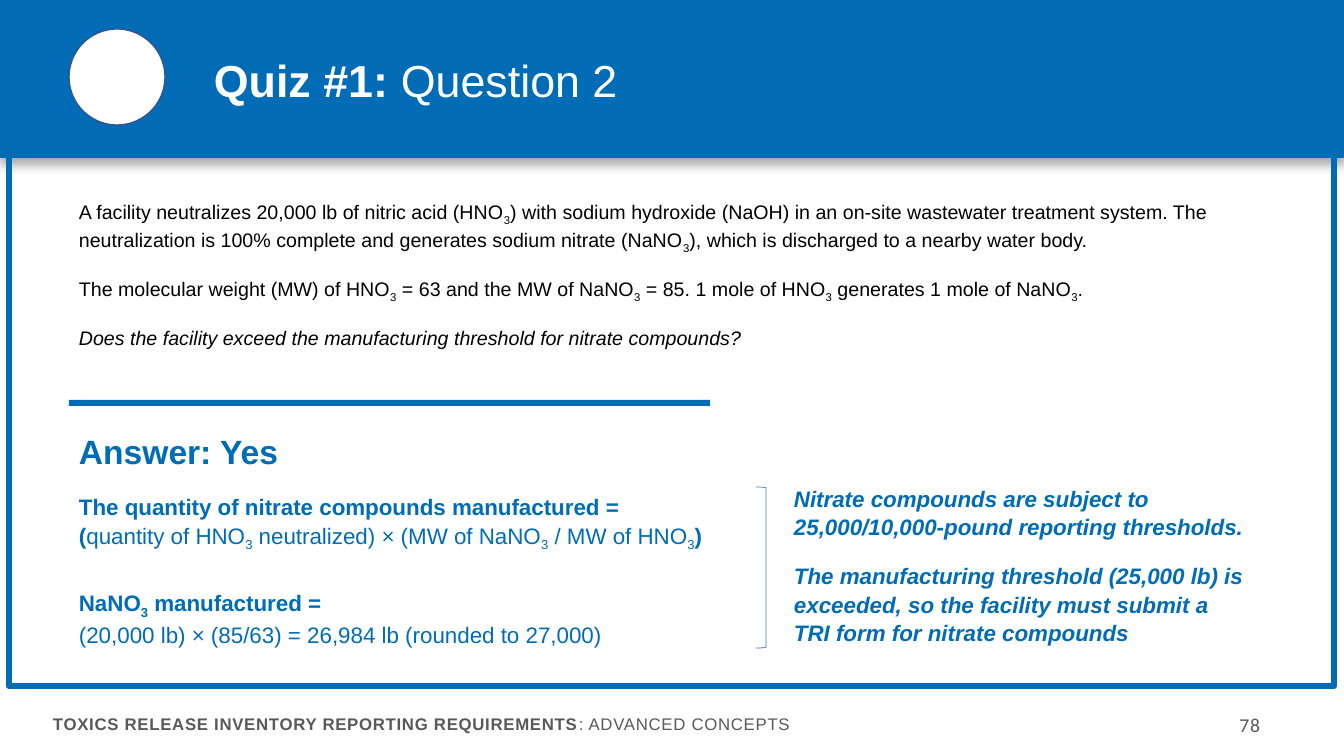
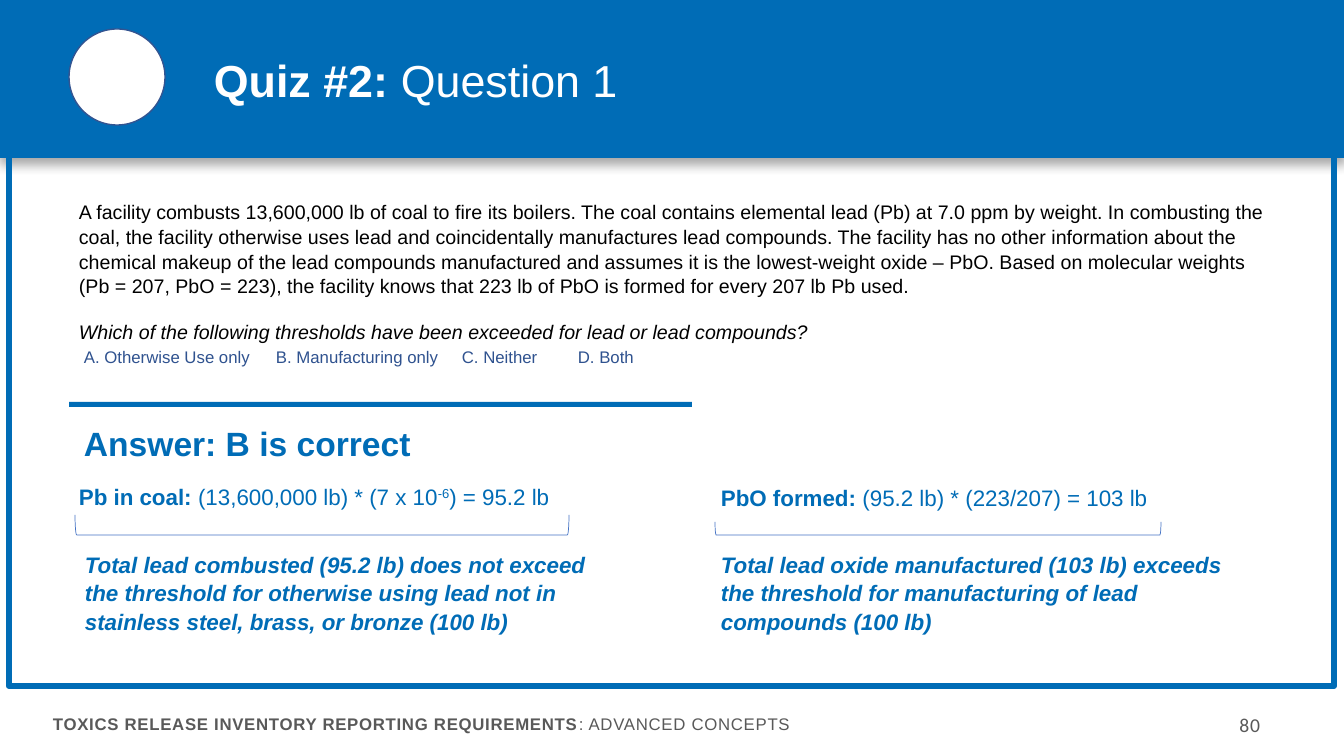
from dataclasses import dataclass

from lxml import etree
from pptx import Presentation
from pptx.dml.color import RGBColor
from pptx.enum.shapes import MSO_SHAPE
from pptx.enum.text import MSO_ANCHOR, PP_ALIGN
from pptx.oxml.ns import qn
from pptx.util import Emu, Pt

RECT, OVAL = MSO_SHAPE.RECTANGLE, MSO_SHAPE.OVAL
BRACE = MSO_SHAPE.RIGHT_BRACKET
MIDDLE, TOP = MSO_ANCHOR.MIDDLE, MSO_ANCHOR.TOP
LEFT, RIGHT = PP_ALIGN.LEFT, PP_ALIGN.RIGHT
SCALE = 914400 / 100.8
BASE = {"~": "-25000", "^": "30000"}


@dataclass(frozen=True)
class Theme:
    font: str = "Arial"
    digit: str = "Calibri"
    blue: str = "006CB6"
    navy: str = "325491"
    pick: str = "2F528F"
    edge: str = "4472C4"
    gray: str = "595959"
    black: str = "000000"
    white: str = "FFFFFF"
    title: int = 32
    head: int = 24
    note: int = 16
    body: int = 14
    small: int = 12


def px(num):
    return Emu(round(num * SCALE))


def bits(text):
    """Yield (text, marks): | toggles bold, ~ subscript, ^ superscript."""
    marks, word = set(), ""
    for char in text + "|":
        if char not in "|~^\n":
            word += char
            continue
        if word:
            yield word, set(marks)
            word = ""
        if char == "\n":
            yield char, set()
        else:
            marks ^= {char}


class Deck:
    def __init__(self, theme):
        self.theme = theme
        self.file = Presentation()
        self.file.slide_width, self.file.slide_height = px(1344), px(756)
        self.slide = None

    def shape(self, kind, box, fill=None, line=None, width=1):
        item = self.slide.shapes.add_shape(kind, *map(px, box))
        item.shadow.inherit = False
        if fill:
            item.fill.solid()
            item.fill.fore_color.rgb = RGBColor.from_string(fill)
        else:
            item.fill.background()
        if line:
            item.line.color.rgb = RGBColor.from_string(line)
            item.line.width = Pt(width)
        else:
            item.line.fill.background()
        return item

    def text(self, box, paras, size, color, font=None, bold=False,
             italic=False, align=LEFT, anchor=TOP, lead=1.05, track=0):
        frame = self.slide.shapes.add_textbox(*map(px, box)).text_frame
        frame.word_wrap = True
        frame.vertical_anchor = anchor
        for num, line in enumerate(paras):
            para = frame.add_paragraph() if num else frame.paragraphs[0]
            para.alignment = align
            para.line_spacing = lead
            if num:
                para.space_before = Pt(5)
            if num < len(paras) - 1:
                para.space_after = Pt(10)
            para.font.name = font or self.theme.font
            para.font.size = Pt(size)
            para.font.bold = bold
            para.font.italic = italic
            para.font.color.rgb = RGBColor.from_string(color)
            self.runs(para, line, track)
        return frame

    def runs(self, para, line, track):
        for word, marks in bits(line):
            if word == "\n":
                para.add_line_break()
                continue
            run = para.add_run()
            run.text = word
            if "|" in marks:
                run.font.bold = True
            props = run._r.get_or_add_rPr()
            if track:
                props.set("spc", str(track))
            for mark in marks & BASE.keys():
                props.set("baseline", BASE[mark])

    def shade(self, item):
        """Give a shape a soft shadow below it."""
        list_ = item._element.spPr.find(qn("a:effectLst"))
        cast = etree.SubElement(list_, qn("a:outerShdw"), blurRad=str(Pt(8)),
                                dist=str(Pt(4)), dir="5400000", algn="t",
                                rotWithShape="0")
        color = etree.SubElement(cast, qn("a:srgbClr"), val=self.theme.black)
        etree.SubElement(color, qn("a:alpha"), val="34000")

    def page(self, title, num):
        """Start a slide with its band, frame, title and footer."""
        look = self.theme
        self.slide = self.file.slides.add_slide(self.file.slide_layouts[6])
        self.shade(self.shape(RECT, (0, 0, 1344, 158), look.blue))
        self.shape(OVAL, (69, 29, 96, 96), look.white, look.navy)
        self.shape(RECT, (9, 7, 1325, 679), None, look.blue, 4.5)
        self.text((204, 42, 1120, 82), [title], look.title, look.white,
                  anchor=MIDDLE, lead=0.9)
        self.text((43, 709, 849, 30),
                  ["|TOXICS RELEASE INVENTORY REPORTING REQUIREMENTS|"
                   ": ADVANCED CONCEPTS"],
                  look.small, look.gray, lead=1.0, track=50)
        self.text((1136, 708, 134, 34), [num], look.body, look.gray,
                  look.digit, align=RIGHT, lead=1.0, track=50)

    def facts(self, *paras):
        """Write the case; its last paragraph is the question."""
        look = self.theme
        frame = self.text((69, 194, 1207, 116), paras, look.body, look.black)
        frame.paragraphs[-1].font.italic = True

    def rule(self, y, width, high):
        self.shape(RECT, (69, y, width, high), self.theme.blue)

    def head(self, x, y, line):
        self.text((x, y, 420, 48), [line], self.theme.head, self.theme.blue,
                  bold=True)

    def sum(self, box, line):
        self.text(box, [line], self.theme.note, self.theme.blue)

    def note(self, box, *paras):
        self.text(box, paras, self.theme.note, self.theme.blue,
                  bold=True, italic=True)

    def side(self, box):
        return self.shape(BRACE, box, None, self.theme.edge, 0.5)

    def under(self, x, y, wide, high):
        """Draw a bracket that opens upward within the given box."""
        move = (wide - high) / 2
        self.side((x + move, y - move, high, wide)).rotation = 90

    def picks(self, y, **spots):
        for key, (x, line) in spots.items():
            self.text((x, y, 200, 30), [f"{key}. {line}"], self.theme.small,
                      self.theme.pick, lead=1.0)


def acid(deck):
    deck.page("|Quiz #1: |Question 2", "78")
    deck.facts(
        "A facility neutralizes 20,000 lb of nitric acid (HNO~3~) with sodium "
        "hydroxide (NaOH) in an on-site wastewater treatment system. The "
        "neutralization is 100% complete and generates sodium nitrate "
        "(NaNO~3~), which is discharged to a nearby water body.",
        "The molecular weight (MW) of HNO~3~ = 63 and the MW of NaNO~3~ = 85. "
        "1 mole of HNO~3~ generates 1 mole of NaNO~3~.",
        "Does the facility exceed the manufacturing threshold for nitrate "
        "compounds?")
    deck.rule(400, 641, 6)
    deck.head(69, 424, "Answer: Yes")
    deck.sum((69, 487, 687, 68),
             "|The quantity of nitrate compounds manufactured =\n(|quantity of "
             "HNO~3~ neutralized) × (MW of NaNO~3~ / MW of HNO~3~|)|")
    deck.sum((69, 583, 631, 68),
             "|NaNO~3~ manufactured =|\n"
             "(20,000 lb) × (85/63) = 26,984 lb (rounded to 27,000)")
    deck.note((784, 479, 473, 133),
              "Nitrate compounds are subject to 25,000/10,000-pound reporting "
              "thresholds.",
              "The manufacturing threshold (25,000 lb) is exceeded, so the "
              "facility must submit a TRI form for nitrate compounds")
    deck.side((756, 487, 10, 161))


def lead(deck):
    deck.page("|Quiz #2: |Question 1", "80")
    deck.facts(
        "A facility combusts 13,600,000 lb of coal to fire its boilers. The "
        "coal contains elemental lead (Pb) at 7.0 ppm by weight. In combusting "
        "the coal, the facility otherwise uses lead and coincidentally "
        "manufactures lead compounds. The facility has no other information "
        "about the chemical makeup of the lead compounds manufactured and "
        "assumes it is the lowest-weight oxide – PbO. Based on molecular "
        "weights (Pb = 207, PbO = 223), the facility knows that 223 lb of PbO "
        "is formed for every 207 lb Pb used.",
        "Which of the following thresholds have been exceeded for lead or lead "
        "compounds?")
    deck.picks(342, A=(74, "Otherwise Use only"),
               B=(266, "Manufacturing only"),
               C=(452, "Neither"), D=(568, "Both"))
    deck.rule(402, 623, 5)
    deck.head(74, 416, "Answer: B is correct")
    deck.sum((69, 477, 546, 30),
             "|Pb in coal: |(13,600,000 lb) * (7 x 10^-6^) = 95.2 lb")
    deck.sum((711, 478, 535, 30),
             "|PbO formed: |(95.2 lb) * (223/207) = 103 lb")
    deck.under(75, 515, 494, 20)
    deck.under(715, 522, 446, 13)
    deck.note((75, 545, 532, 99),
              "Total lead combusted (95.2 lb) does not exceed the threshold "
              "for otherwise using lead not in stainless steel, brass, or "
              "bronze (100 lb)")
    deck.note((711, 545, 532, 99),
              "Total lead oxide manufactured (103 lb) exceeds the threshold "
              "for manufacturing of lead compounds (100 lb)")


def main():
    deck = Deck(Theme())
    acid(deck)
    lead(deck)
    deck.file.save("out.pptx")


if __name__ == "__main__":
    main()
